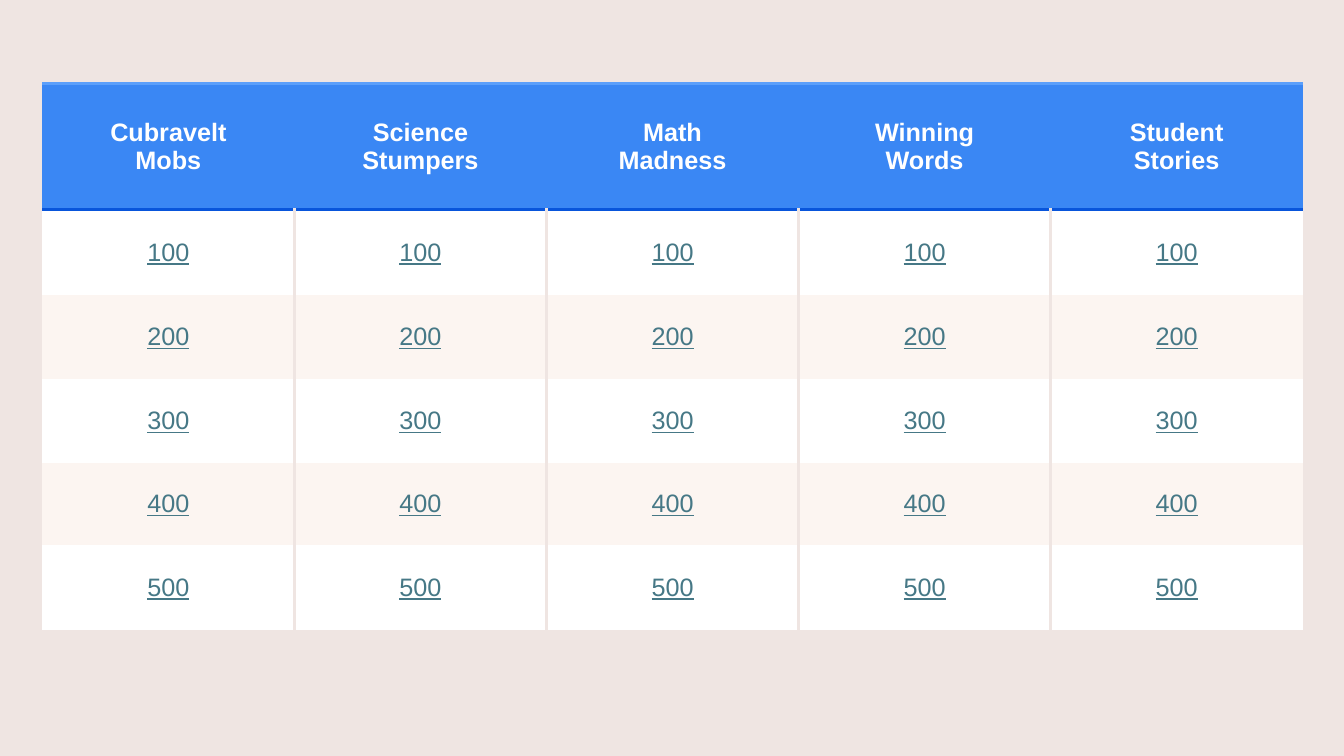
from dataclasses import dataclass

from lxml.etree import SubElement
from pptx import Presentation
from pptx.dml.color import RGBColor
from pptx.enum.text import MSO_ANCHOR, PP_ALIGN
from pptx.oxml.ns import qn
from pptx.util import Inches, Pt

CATEGORIES = [
    ("Cubravelt", "Mobs"),
    ("Science", "Stumpers"),
    ("Math", "Madness"),
    ("Winning", "Words"),
    ("Student", "Stories"),
]
POINTS = [100, 200, 300, 400, 500]
ROW_HEIGHTS = [1.25, 0.85, 0.83, 0.83, 0.82, 0.84]
COLUMN_WIDTH = 2.5
BOARD_LEFT, BOARD_TOP = 0.42, 0.83


@dataclass(frozen=True)
class Theme:
    """Colours and type of the board."""
    background: str = "EFE5E2"
    header: str = "3A87F4"
    header_top: str = "5B9FFB"
    header_bottom: str = "0855DB"
    header_text: str = "FFFFFF"
    bands: tuple = ("FFFFFF", "FCF5F1")
    points_text: str = "467886"
    font: str = "Arial"
    size: float = 18
    border: float = 2.25


THEME = Theme()


def set_borders(cell, **colours):
    """Draw the given sides (L, R, T, B) and clear the others."""
    properties = cell._tc.get_or_add_tcPr()
    for side in "LRTB":
        line = SubElement(properties, qn(f"a:ln{side}"), w=str(Pt(THEME.border)))
        colour = colours.get(side)
        if colour:
            fill = SubElement(line, qn("a:solidFill"))
            SubElement(fill, qn("a:srgbClr"), val=colour)
        else:
            SubElement(line, qn("a:noFill"))


def fill_cell(cell, lines, fill, colour, is_header):
    """Write centred lines of text on a plain fill."""
    cell.fill.solid()
    cell.fill.fore_color.rgb = RGBColor.from_string(fill)
    cell.vertical_anchor = MSO_ANCHOR.MIDDLE
    cell.text = "\n".join(lines)
    for paragraph in cell.text_frame.paragraphs:
        paragraph.alignment = PP_ALIGN.CENTER
        font = paragraph.font
        font.name, font.size = THEME.font, Pt(THEME.size)
        font.color.rgb = RGBColor.from_string(colour)
        font.bold = is_header
        font.underline = not is_header


def build_board(slide):
    """Add the board of categories and points."""
    board = slide.shapes.add_table(
        len(POINTS) + 1, len(CATEGORIES), Inches(BOARD_LEFT), Inches(BOARD_TOP),
        Inches(COLUMN_WIDTH * len(CATEGORIES)), Inches(sum(ROW_HEIGHTS))).table
    board.horz_banding = False
    for row, height in zip(board.rows, ROW_HEIGHTS):
        row.height = Inches(height)
    last = len(CATEGORIES) - 1
    for column, category in enumerate(CATEGORIES):
        board.columns[column].width = Inches(COLUMN_WIDTH)
        heading = board.cell(0, column)
        set_borders(heading, T=THEME.header_top, B=THEME.header_bottom)
        fill_cell(heading, category, THEME.header, THEME.header_text, True)
        for index, points in enumerate(POINTS):
            clue = board.cell(index + 1, column)
            set_borders(
                clue,
                L=THEME.background if column > 0 else None,
                R=THEME.background if column < last else None,
                T=THEME.header_bottom if index == 0 else None)
            fill_cell(clue, [str(points)], THEME.bands[index % 2],
                      THEME.points_text, False)


def main():
    """Build and save the slide."""
    deck = Presentation()
    deck.slide_width, deck.slide_height = Inches(13.33), Inches(7.5)
    slide = deck.slides.add_slide(deck.slide_layouts[6])
    slide.background.fill.solid()
    slide.background.fill.fore_color.rgb = RGBColor.from_string(THEME.background)
    build_board(slide)
    deck.save("out.pptx")


if __name__ == "__main__":
    main()
